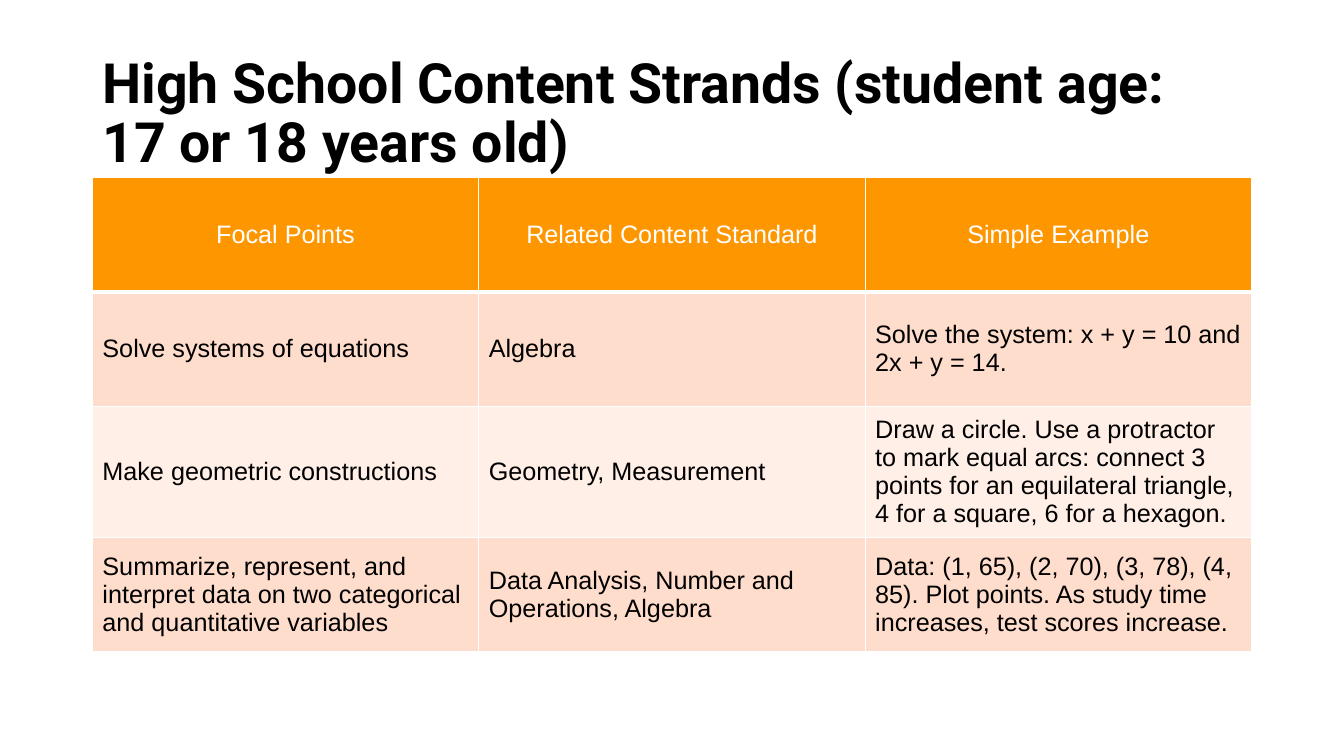
from lxml.etree import SubElement
from pptx import Presentation
from pptx.dml.color import RGBColor
from pptx.enum.text import MSO_ANCHOR, PP_ALIGN
from pptx.oxml.ns import qn
from pptx.util import Pt

PX = 9525  # EMU per px, 96 px to the inch
SLIDE_SIZE = (1280, 720)
TITLE_BOX = (88, 63, 1104, 93)
STRANDS_BOX = (88, 169, 1104, 436)

BLACK = RGBColor(0x00, 0x00, 0x00)
WHITE = RGBColor(0xFF, 0xFF, 0xFF)
ORANGE = RGBColor(0xFE, 0x96, 0x00)
PEACH = RGBColor(0xFF, 0xDD, 0xCC)
PALE_PEACH = RGBColor(0xFF, 0xEF, 0xE7)

TITLE = "High School Content Strands (student age: 17 or 18 years old)"
STRANDS = [
    ("Focal Points", "Related Content Standard", "Simple Example"),
    ("Solve systems of equations", "Algebra",
     "Solve the system: x + y = 10 and 2x + y = 14."),
    ("Make geometric constructions", "Geometry, Measurement",
     "Draw a circle. Use a protractor to mark equal arcs: connect 3 points "
     "for an equilateral triangle, 4 for a square, 6 for a hexagon."),
    ("Summarize, represent, and interpret data on two categorical and "
     "quantitative variables",
     "Data Analysis, Number and Operations, Algebra",
     "Data: (1, 65), (2, 70), (3, 78), (4, 85). Plot points. "
     "As study time increases, test scores increase."),
]

TITLE_FONT = {"name": "Roboto", "size": Pt(39.6), "bold": True}
CELL_FONT = {"name": "Arial", "size": Pt(18), "bold": False}


def to_emu(box):
    return [length * PX for length in box]


def write(frame, text, font_format, color, align):
    frame.text = text
    paragraph = frame.paragraphs[0]
    paragraph.alignment = align
    font = paragraph.runs[0].font
    for attribute, value in font_format.items():
        setattr(font, attribute, value)
    font.color.rgb = color
    return paragraph


def add_borders(cell, bottom_width):
    properties = cell._tc.get_or_add_tcPr()
    for side in ("lnL", "lnR", "lnT", "lnB"):
        width = bottom_width if side == "lnB" else Pt(1)
        border = SubElement(properties, qn(f"a:{side}"), w=str(width))
        fill = SubElement(border, qn("a:solidFill"))
        SubElement(fill, qn("a:srgbClr"), val=str(WHITE))


def add_title(slide, box):
    frame = slide.shapes.add_textbox(*to_emu(box)).text_frame
    frame.word_wrap = True
    frame.vertical_anchor = MSO_ANCHOR.MIDDLE
    heading = write(frame, TITLE, TITLE_FONT, BLACK, PP_ALIGN.LEFT)
    heading.line_spacing = 0.9


def add_strands_table(slide, box):
    table = slide.shapes.add_table(
        len(STRANDS), len(STRANDS[0]), *to_emu(box)).table
    for row, texts in enumerate(STRANDS):
        is_header = row == 0
        band = ORANGE if is_header else PEACH if row % 2 else PALE_PEACH
        color = WHITE if is_header else BLACK
        align = PP_ALIGN.CENTER if is_header else PP_ALIGN.LEFT
        for column, text in enumerate(texts):
            cell = table.cell(row, column)
            cell.vertical_anchor = MSO_ANCHOR.MIDDLE
            add_borders(cell, Pt(3) if is_header else Pt(1))
            cell.fill.solid()
            cell.fill.fore_color.rgb = band
            write(cell.text_frame, text, CELL_FONT, color, align)


def main():
    deck = Presentation()
    deck.slide_width, deck.slide_height = to_emu(SLIDE_SIZE)
    slide = deck.slides.add_slide(deck.slide_layouts[6])
    add_title(slide, TITLE_BOX)
    add_strands_table(slide, STRANDS_BOX)
    deck.save("out.pptx")


if __name__ == "__main__":
    main()
